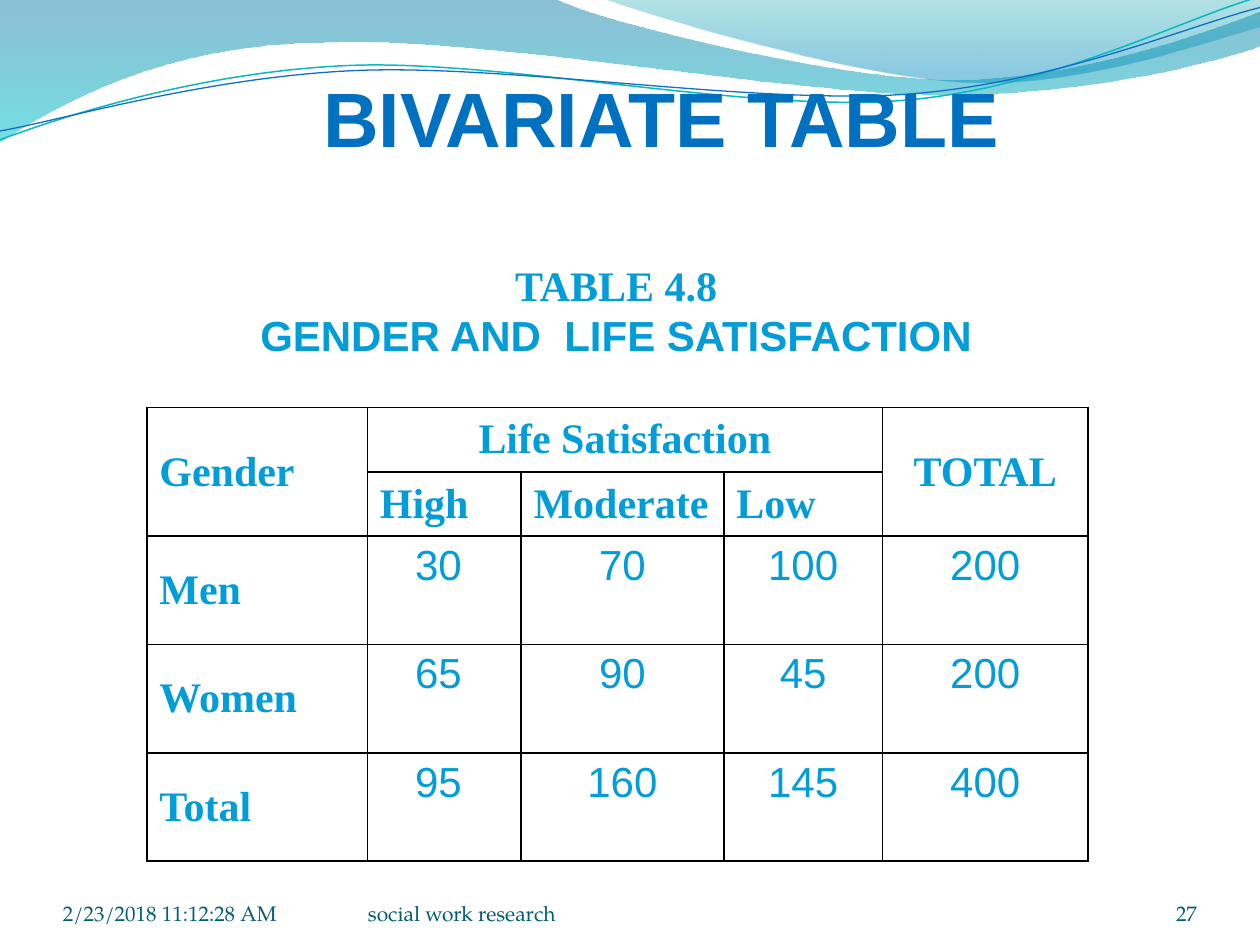
import math
from typing import NamedTuple

from lxml import etree
from pptx import Presentation
from pptx import util as u
from pptx.dml.color import RGBColor
from pptx.enum import text as t
from pptx.oxml.ns import qn

SCALE = 9144  # EMU per px, 100 px to the inch
COLOURS = {
    "title": "0070C0", "accent": "009DD9", "footer": "045D75", "border": "000000",
    "deep": "0074A1", "aqua": "00C6CF", "teal": "00A1A9", "blue": "008BBF",
    "teal line": "0AB8BF", "blue line": "0F6FC6",
}
SANS, SERIF, FOOTER_FONT = "Arial", "Times New Roman", "TeX Gyre Pagella"
LEFT, CENTRE, RIGHT = t.PP_ALIGN.LEFT, t.PP_ALIGN.CENTER, t.PP_ALIGN.RIGHT
TOP, MIDDLE, BOTTOM = t.MSO_ANCHOR.TOP, t.MSO_ANCHOR.MIDDLE, t.MSO_ANCHOR.BOTTOM


class Style(NamedTuple):
    font: str
    size: int
    colour: str
    bold: bool = False


class Stop(NamedTuple):
    position: float
    colour: str
    opacity: int


class Wave(NamedTuple):
    """Segments are (x, y) for a corner, or six numbers for a Bezier curve."""
    segments: list[tuple[int, ...]]
    stops: tuple[Stop, ...] = ()
    line: str = ""
    width: float = 0
    tilt: float = 0


class Footer(NamedTuple):
    text: str
    left: int
    width: int
    align: t.PP_ALIGN


HEADING = Style(SANS, 44, "title", True)
LABEL = Style(SERIF, 24, "accent", True)
CAPTION = Style(SANS, 24, "accent", True)
NUMBER = Style(SANS, 24, "accent")
FOOTNOTE = Style(FOOTER_FONT, 12, "footer")

WAVES = [
    Wave([(0, -1), (440, -1), (476, 17, 664, 63, 758, 63), (853, 63, 958, 26, 1000, 9),
          (1001, 36), (983, 44, 870, 76, 746, 75), (622, 75, 382, 28, 257, 34),
          (129, 35, 46, 83, -1, 113)],
         (Stop(0, "deep", 45), Stop(1, "aqua", 55))),
    Wave([(479, -1), (509, 11, 682, 62, 769, 65), (856, 69, 961, 32, 1000, 21), (1000, 0)],
         (Stop(0, "teal", 30), Stop(0.8, "blue", 45))),
    Wave([(0, 111), (48, 93, 158, 57, 277, 52), (395, 47, 593, 89, 713, 80),
          (833, 71, 938, 15, 998, -2)], line="teal line", width=0.85, tilt=-2.7),
    Wave([(0, 104), (47, 96, 164, 61, 283, 56), (403, 51, 597, 83, 717, 75),
          (836, 67, 941, 21, 1000, 6)], line="blue line", width=0.75, tilt=-2.7),
]
COLUMNS = [175, 122, 161, 126, 163]
ROWS = [51, 51, 86, 86, 86]
MERGES = [((0, 0), (1, 0)), ((0, 1), (0, 3)), ((0, 4), (1, 4))]
TABLE = [
    ["Gender", "Life Satisfaction", "", "", "TOTAL"],
    ["", "High", "Moderate", "Low", ""],
    ["Men", "30", "70", "100", "200"],
    ["Women", "65", "90", "45", "200"],
    ["Total", "95", "160", "145", "400"],
]
FOOTERS = [
    Footer("2/23/2018 11:12:28 AM", 50, 233, LEFT),
    Footer("27", 867, 83, RIGHT),
    Footer("social work research", 292, 367, LEFT),
]


def px(value: float) -> int:
    return round(value * SCALE)


def rgb(name: str) -> RGBColor:
    return RGBColor.from_string(COLOURS[name])


def rotate(x: float, y: float, degrees: float) -> tuple[int, int]:
    cosine, sine = math.cos(math.radians(degrees)), math.sin(math.radians(degrees))
    return round(x * cosine - y * sine), round(x * sine + y * cosine)


def write(paragraph, text: str, style: Style, align: t.PP_ALIGN) -> None:
    paragraph.alignment = align
    run = paragraph.add_run()
    run.text = text
    run.font.name, run.font.size, run.font.bold = style.font, u.Pt(style.size), style.bold
    run.font.color.rgb = rgb(style.colour)


def add_text_box(slide, left: int, top: int, width: int, height: int, anchor: t.MSO_ANCHOR,
                 lines: list[tuple[str, Style]], align: t.PP_ALIGN, wrap: bool = True) -> None:
    frame = slide.shapes.add_textbox(px(left), px(top), px(width), px(height)).text_frame
    frame.margin_left = frame.margin_right = frame.margin_top = frame.margin_bottom = 0
    frame.word_wrap, frame.vertical_anchor = wrap, anchor
    for index, (text, style) in enumerate(lines):
        paragraph = frame.add_paragraph() if index else frame.paragraphs[0]
        write(paragraph, text, style, align)


def add_curves(slide, wave: Wave):
    """Draw the control polygon, then bend each triple of points into one curve."""
    start, *rest = [rotate(px(segment[i]), px(segment[i + 1]), -wave.tilt)
                    for segment in wave.segments for i in range(0, len(segment), 2)]
    builder = slide.shapes.build_freeform(*start)
    builder.add_line_segments(rest, close=bool(wave.stops))
    shape = builder.convert_to_shape()
    lines = iter(list(shape._element.spPr.iter(qn("a:lnTo"))))
    for segment in wave.segments[1:]:
        line = next(lines)
        if len(segment) == 6:
            curve = etree.Element(qn("a:cubicBezTo"))
            line.addprevious(curve)
            for part in (line, next(lines), next(lines)):
                curve.append(part[0])
                part.getparent().remove(part)
    # Turn the shape about its own middle
    middle = rotate(shape.left + shape.width / 2, shape.top + shape.height / 2, wave.tilt)
    shape.left = middle[0] - shape.width // 2
    shape.top = middle[1] - shape.height // 2
    shape.rotation = wave.tilt
    return shape


def add_wave(slide, wave: Wave) -> None:
    shape = add_curves(slide, wave)
    shape.shadow.inherit = False
    if not wave.stops:
        shape.fill.background()
        shape.line.color.rgb, shape.line.width = rgb(wave.line), u.Pt(wave.width)
        return
    shape.line.fill.background()
    shape.fill.gradient()
    shape.fill.gradient_angle = 270
    for gradient_stop, stop in zip(shape.fill.gradient_stops, wave.stops):
        gradient_stop.position = stop.position
        gradient_stop.color.rgb = rgb(stop.colour)
    for colour, stop in zip(shape._element.spPr.iter(qn("a:srgbClr")), wave.stops):
        etree.SubElement(colour, qn("a:alpha"), val=str(stop.opacity * 1000))


def add_borders(cell) -> None:
    properties = cell._tc.get_or_add_tcPr()
    for index, side in enumerate(("a:lnL", "a:lnR", "a:lnT", "a:lnB")):
        line = etree.Element(qn(side), w=str(u.Pt(1)))
        fill = etree.SubElement(line, qn("a:solidFill"))
        etree.SubElement(fill, qn("a:srgbClr"), val=COLOURS["border"])
        properties.insert(index, line)


def add_data_table(slide) -> None:
    table = slide.shapes.add_table(len(ROWS), len(COLUMNS), px(116.5), px(323.5),
                                   px(sum(COLUMNS)), px(sum(ROWS))).table
    table.first_row = table.horz_banding = False
    for column, width in zip(table.columns, COLUMNS):
        column.width = px(width)
    for row, height in zip(table.rows, ROWS):
        row.height = px(height)
    for first, last in MERGES:
        table.cell(*first).merge(table.cell(*last))
    for r, values in enumerate(TABLE):
        for c, value in enumerate(values):
            cell = table.cell(r, c)
            cell.fill.background()
            add_borders(cell)
            if not value:
                continue
            is_number = value.isdigit()
            cell.vertical_anchor = TOP if is_number else MIDDLE
            if is_number and c == 1:  # first figures are indented, not centred
                cell.margin_left = px(38)
            centred = (is_number and c > 1) or (r == 0 and c > 0)
            write(cell.text_frame.paragraphs[0], value, NUMBER if is_number else LABEL,
                  CENTRE if centred else LEFT)


def main() -> None:
    presentation = Presentation()
    presentation.slide_width, presentation.slide_height = px(1000), px(750)
    slide = presentation.slides.add_slide(presentation.slide_layouts[5])
    # Wave decoration
    for wave in WAVES:
        add_wave(slide, wave)
    # Title, in front of the waves
    title = slide.shapes.title
    title.left, title.top, title.width, title.height = px(100), px(30), px(850), px(125)
    title.text_frame.vertical_anchor = MIDDLE
    write(title.text_frame.paragraphs[0], "BIVARIATE TABLE", HEADING, CENTRE)
    slide.shapes._spTree.append(title._element)
    # Caption and table
    add_text_box(slide, 204, 166, 570, 160, MIDDLE,
                 [("TABLE 4.8", LABEL), ("GENDER AND  LIFE SATISFACTION", CAPTION)],
                 CENTRE, wrap=False)
    add_data_table(slide)
    # Footer
    for footer in FOOTERS:
        add_text_box(slide, footer.left, 695, footer.width, 40, BOTTOM,
                     [(footer.text, FOOTNOTE)], footer.align)
    presentation.save("out.pptx")


if __name__ == "__main__":
    main()
